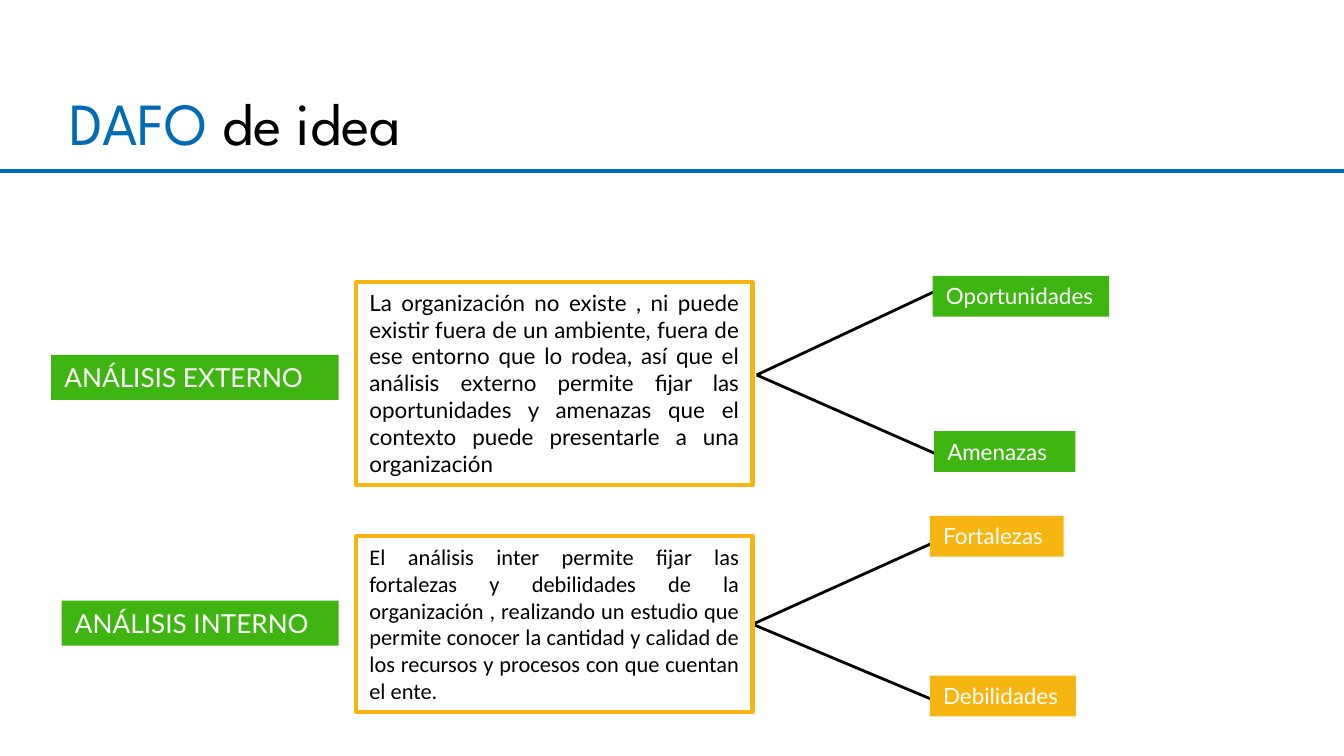
from dataclasses import dataclass

from lxml.etree import SubElement
from pptx import Presentation
from pptx.dml.color import RGBColor as RGB
from pptx.enum.shapes import MSO_CONNECTOR as Connector, MSO_SHAPE as Shape
from pptx.enum.text import MSO_ANCHOR as Anchor, MSO_AUTO_SIZE as AutoSize, PP_ALIGN as Align
from pptx.oxml.ns import qn
from pptx.util import Pt


@dataclass(frozen=True)
class Theme:
    blue: RGB = RGB(0x00, 0x6C, 0xB5)
    green: RGB = RGB(0x3F, 0xB5, 0x12)
    amber: RGB = RGB(0xF7, 0xB5, 0x12)
    black: RGB = RGB(0, 0, 0)
    white: RGB = RGB(255, 255, 255)
    title_font: str = "League Spartan"
    body_font: str = "Lato"
    alternate_font: str = "Calibri"
    title_size: int = 32
    heading_size: int = 14
    body_size: int = 12


class Page:
    def __init__(self, slide, theme):
        self.slide = slide
        self.theme = theme

    def add_span(self, para, text, size, color, font):
        span = para.add_run()
        span.text = text
        span.font.size = Pt(size)
        span.font.name = font
        span.font.color.rgb = color

    def title(self, left, top, width, height, spans):
        box = self.slide.shapes.add_textbox(Pt(left), Pt(top), Pt(width), Pt(height))
        frame = box.text_frame
        frame.word_wrap = True
        frame.vertical_anchor = Anchor.MIDDLE
        for text, color in spans:
            self.add_span(frame.paragraphs[0], text, self.theme.title_size, color,
                          self.theme.title_font)

    def rectangle(self, left, top, width, height, text, size, color, font, align):
        box = self.slide.shapes.add_shape(Shape.RECTANGLE, Pt(left), Pt(top), Pt(width), Pt(height))
        box.shadow.inherit = False
        frame = box.text_frame
        frame.word_wrap = True
        frame.auto_size = AutoSize.SHAPE_TO_FIT_TEXT
        frame.vertical_anchor = Anchor.TOP
        para = frame.paragraphs[0]
        para.alignment = align
        self.add_span(para, text, size, color, font)
        return box

    def label(self, left, top, width, height, text, size, fill):
        box = self.rectangle(left, top, width, height, text, size, self.theme.white,
                             self.theme.body_font, Align.LEFT)
        box.fill.solid()
        box.fill.fore_color.rgb = fill
        box.line.fill.background()

    def description(self, left, top, width, height, text, font):
        box = self.rectangle(left, top, width, height, text, self.theme.body_size,
                             self.theme.black, font, Align.JUSTIFY)
        box.fill.background()
        box.line.color.rgb = self.theme.amber
        box.line.width = Pt(2.25)
        return box

    def line(self, start, end, color, width):
        line = self.slide.shapes.add_connector(Connector.STRAIGHT, *map(Pt, start + end))
        line.line.color.rgb = color
        line.line.width = Pt(width)
        SubElement(line._element.spPr, qn("a:effectLst"))
        return line

    def arrow(self, start, end):
        arrow = self.line(start, end, self.theme.black, 1.5)
        SubElement(arrow.line._get_or_add_ln(), qn("a:tailEnd"), type="triangle")
        return arrow


def main():
    deck = Presentation()
    deck.slide_width, deck.slide_height = Pt(720), Pt(405)
    theme = Theme()
    page = Page(deck.slides.add_slide(deck.slide_layouts[6]), theme)

    page.title(30.24, 32.4, 350, 65.5, [("DAFO ", theme.blue), ("de idea", theme.black)])
    page.line((0, 91.44), (720, 91.44), theme.blue, 2)

    # Arrows come before the labels, which cover their heads.
    for end in [(508.3, 246.2), (508.3, 152.6)]:
        page.arrow((405.4, 200.9), end)
    inner_arrows = [page.arrow((403.2, 334.4), end) for end in [(507.6, 287.3), (505.4, 377.3)]]

    text_left, text_width = 190.8, 212.4
    page.description(
        text_left, 151.2, text_width, 108.7,
        "La organización no existe , ni puede existir fuera de un ambiente, fuera de ese entorno "
        "que lo rodea, así que el análisis externo permite fijar las oportunidades y amenazas "
        "que el contexto puede presentarle a una organización", theme.body_font)
    inner_text = page.description(
        text_left, 287.3, text_width, 94.3,
        "El análisis inter permite fijar las fortalezas y debilidades de la organización , "
        "realizando un estudio que permite conocer la cantidad y calidad de los recursos y "
        "procesos con que cuentan el ente.", theme.alternate_font)
    for arrow in inner_arrows:
        arrow.begin_connect(inner_text, 3)

    heading_right = 181.4
    for text, top, width in [("ANÁLISIS EXTERNO", 190.1, 154), ("ANÁLISIS INTERNO", 321.8, 148.3)]:
        page.label(heading_right - width, top, width, 24.2, text, theme.heading_size, theme.green)

    for text, left, top, width, fill in [
        ("Oportunidades", 499.7, 147.8, 94.5, theme.green),
        ("Amenazas", 500.4, 231, 75.8, theme.green),
        ("Fortalezas", 498.2, 276.4, 71.7, theme.amber),
        ("Debilidades", 498.2, 362, 78.3, theme.amber),
    ]:
        page.label(left, top, width, 21.8, text, theme.body_size, fill)

    deck.save("out.pptx")


if __name__ == "__main__":
    main()
